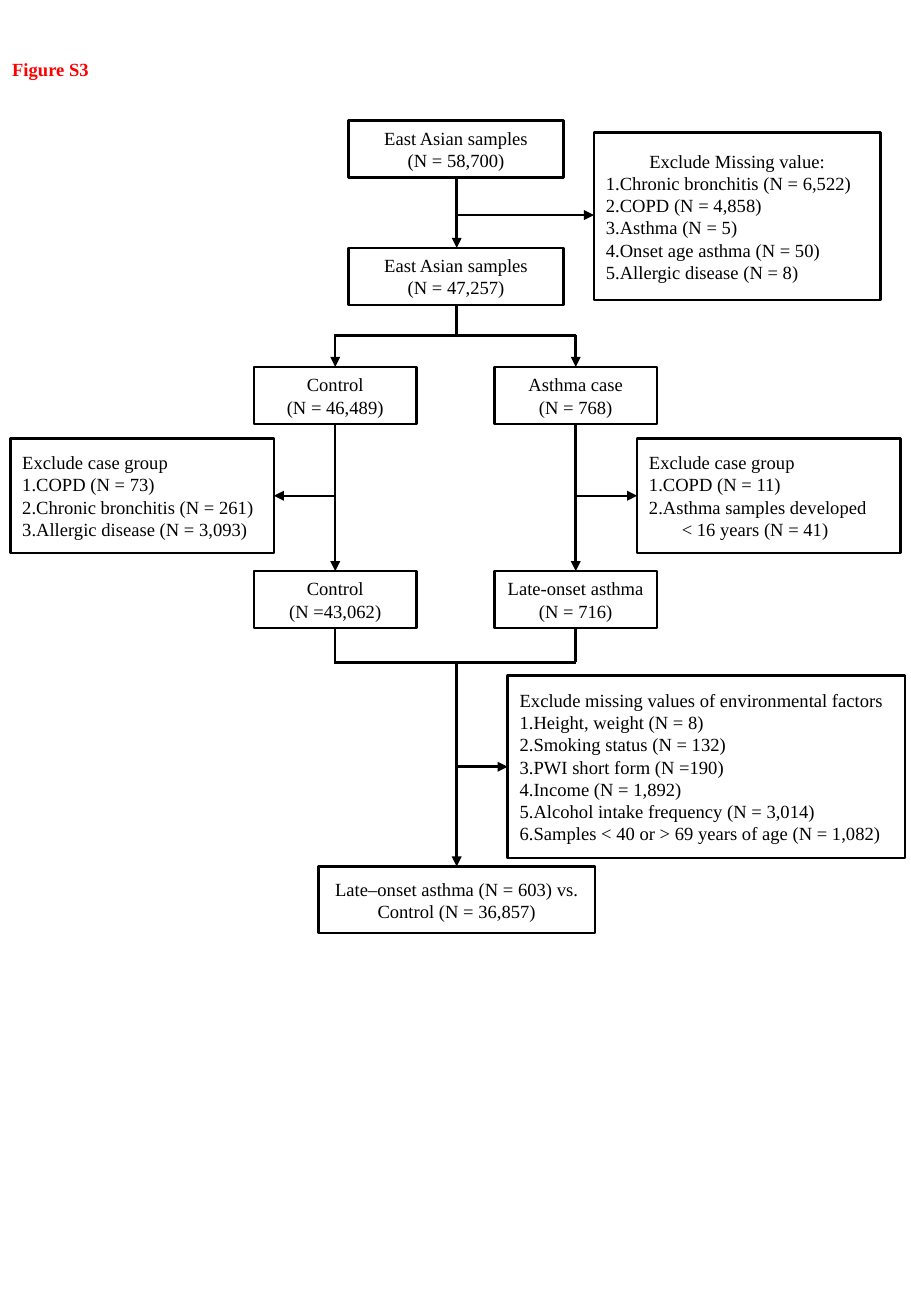
from dataclasses import dataclass
from lxml import etree
from pptx import Presentation, util as u
from pptx.dml.color import RGBColor
from pptx.enum import shapes, text
from pptx.oxml.ns import qn

COLS, ROWS = 750, 1083
CELL = u.Inches(0.01)
MID = 376
BOX_H = 47


@dataclass(frozen=True)
class Theme:
    """Colours and type sizes of the flow chart."""
    ink: RGBColor = RGBColor(0, 0, 0)
    paper: RGBColor = RGBColor(255, 255, 255)
    accent: RGBColor = RGBColor(255, 0, 0)
    face: str = "Times New Roman"
    size: u.Pt = u.Pt(11)
    lead: u.Pt = u.Pt(13.2)
    rule: u.Pt = u.Pt(1.5)


LOOK = Theme()


def grid(*cells):
    """Turn grid cells into lengths."""
    return [int(cell * CELL) for cell in cells]


def style(para, color=LOOK.ink, bold=False):
    """Set the type of one paragraph."""
    para.line_spacing = LOOK.lead
    font = para.font
    font.name, font.size, font.bold = LOOK.face, LOOK.size, bold
    font.color.rgb = color


def panel(slide, box, lines, align=text.PP_ALIGN.CENTER):
    """Draw a framed box and return its paragraphs."""
    rect = slide.shapes.add_shape(shapes.MSO_SHAPE.RECTANGLE, *grid(*box))
    rect.shadow.inherit = False
    rect.fill.solid()
    rect.fill.fore_color.rgb = LOOK.paper
    rect.line.color.rgb = LOOK.ink
    rect.line.width = LOOK.rule
    frame = rect.text_frame
    frame.word_wrap = True
    frame.vertical_anchor = text.MSO_ANCHOR.MIDDLE
    frame.text = "\n".join(lines)
    for para in frame.paragraphs:
        para.alignment = align
        style(para)
    return frame.paragraphs


def notes(slide, box, head, items, tail=None, align=text.PP_ALIGN.LEFT):
    """Draw a box with a heading, numbered items and an indented tail."""
    lines = [head, *items] + ([tail] if tail else [])
    paras = panel(slide, box, lines, text.PP_ALIGN.LEFT)
    paras[0].alignment = align
    for para in paras[1:len(items) + 1]:
        props = para._p.get_or_add_pPr()
        props.set("marL", "0")
        props.set("indent", str(-int(24 * CELL)))
        mark = etree.Element(qn("a:buAutoNum"), type="arabicPeriod")
        props.find(qn("a:defRPr")).addprevious(mark)
    if tail:
        paras[-1]._p.get_or_add_pPr().set("marL", str(int(27 * CELL)))


def link(slide, start, end, arrow=True):
    """Draw a straight line, with an arrowhead at its end if asked."""
    line = slide.shapes.add_connector(
        shapes.MSO_CONNECTOR.STRAIGHT, *grid(*start, *end))
    line.line.color.rgb = LOOK.ink
    line.line.width = LOOK.rule
    if arrow:
        etree.SubElement(line.line._get_or_add_ln(), qn("a:tailEnd"),
                         type="triangle")
    etree.SubElement(line._element.spPr, qn("a:effectLst"))


def title(slide, box, words):
    """Place the figure label in the title placeholder."""
    head = slide.shapes.title
    head.left, head.top, head.width, head.height = grid(*box)
    frame = head.text_frame
    frame.text = words
    frame.word_wrap = False
    frame.auto_size = text.MSO_AUTO_SIZE.NONE
    frame.vertical_anchor = text.MSO_ANCHOR.MIDDLE
    para = frame.paragraphs[0]
    para.alignment = text.PP_ALIGN.LEFT
    style(para, LOOK.accent, True)


def intake(slide, box):
    """Draw the samples before and after missing values are dropped."""
    x, y, w, h = box
    low = y + h - BOX_H
    for top, count in ((y, "58,700"), (low, "47,257")):
        panel(slide, (x, top, w, BOX_H),
              ["East Asian samples", f"(N = {count})"])
    notes(slide, (x + 202, y + 10, 236, 138), "Exclude Missing value:",
          ["Chronic bronchitis (N = 6,522)", "COPD (N = 4,858)",
           "Asthma (N = 5)", "Onset age asthma (N = 50)",
           "Allergic disease (N = 8)"], align=text.PP_ALIGN.CENTER)
    link(slide, (MID, y + BOX_H), (MID, low))
    link(slide, (MID, y + 78), (x + 202, y + 78))


def arm(slide, box, side, first, last, items, tail=None):
    """Draw one arm, with its exclusions on the given side."""
    x, y, w, h = box
    mid = x + w / 2
    top, low, end = y + 26, y + 194, y + h
    panel(slide, (x, top, w, BOX_H), first)
    panel(slide, (x, low, w, BOX_H), last)
    wide = 217
    hub = mid + side * 159
    notes(slide, (hub - wide / 2, y + 85, wide, 94), "Exclude case group",
          items, tail)
    link(slide, (mid, y), (mid, top))
    link(slide, (mid, top + BOX_H), (mid, low))
    link(slide, (mid, low + BOX_H), (mid, end), False)
    link(slide, (mid, y + 132), (hub - side * wide / 2, y + 132))


def split(slide, box):
    """Draw the control and case arms between two crossbars."""
    x, y, w, h = box
    wide = 134
    arm(slide, (x, y, wide, h), -1,
        ["Control", "(N = 46,489)"], ["Control", "(N =43,062)"],
        ["COPD (N = 73)", "Chronic bronchitis (N = 261)",
         "Allergic disease (N = 3,093)"])
    arm(slide, (x + w - wide, y, wide, h), 1,
        ["Asthma case", "(N = 768)"], ["Late-onset asthma", "(N = 716)"],
        ["COPD (N = 11)", "Asthma samples developed"], "< 16 years (N = 41)")
    link(slide, (MID, y - 25), (MID, y), False)
    for bar in (y, y + h):
        link(slide, (x + wide / 2 - 1, bar), (x + w - wide / 2, bar), False)


def final(slide, box):
    """Draw the last exclusions and the compared groups."""
    x, y, w, h = box
    low = y + h - 55
    panel(slide, (x, low, w, 55),
          ["Late–onset asthma (N = 603) vs. Control (N = 36,857)"])
    notes(slide, (x + 156, y + 11, 327, 150),
          "Exclude missing values of environmental factors",
          ["Height, weight (N = 8)", "Smoking status (N = 132)",
           "PWI short form (N =190)", "Income (N = 1,892)",
           "Alcohol intake frequency (N = 3,014)",
           "Samples < 40 or > 69 years of age (N = 1,082)"])
    link(slide, (MID, y), (MID, low))
    link(slide, (MID, y + 86), (x + 156, y + 86))


def main():
    """Build and save the flow chart."""
    deck = Presentation()
    deck.slide_width, deck.slide_height = grid(COLS, ROWS)
    slide = deck.slides.add_slide(deck.slide_layouts[5])
    title(slide, (0, 42, 84, 29), "Figure S3")
    intake(slide, (287, 99, 177, 152))
    split(slide, (209, 276, 332, 269))
    final(slide, (262, 545, 228, 223))
    deck.save("out.pptx")


if __name__ == "__main__":
    main()
